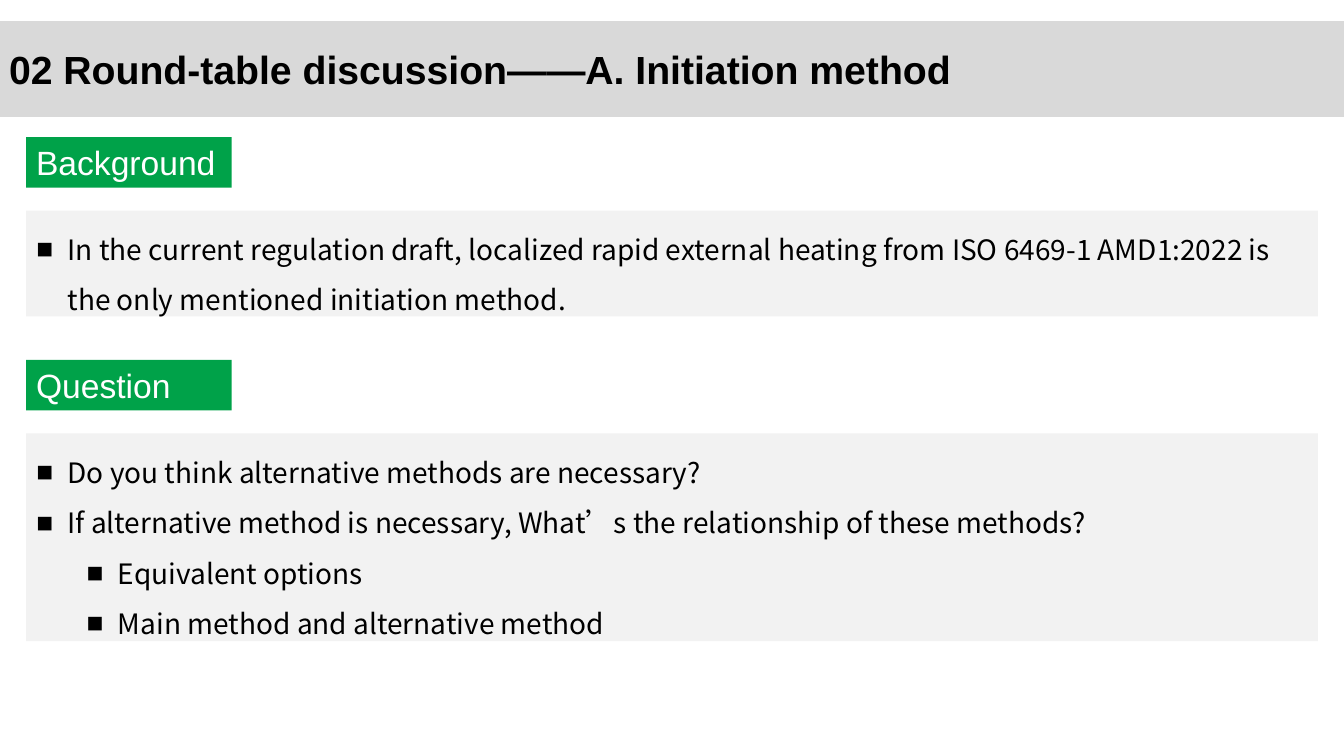
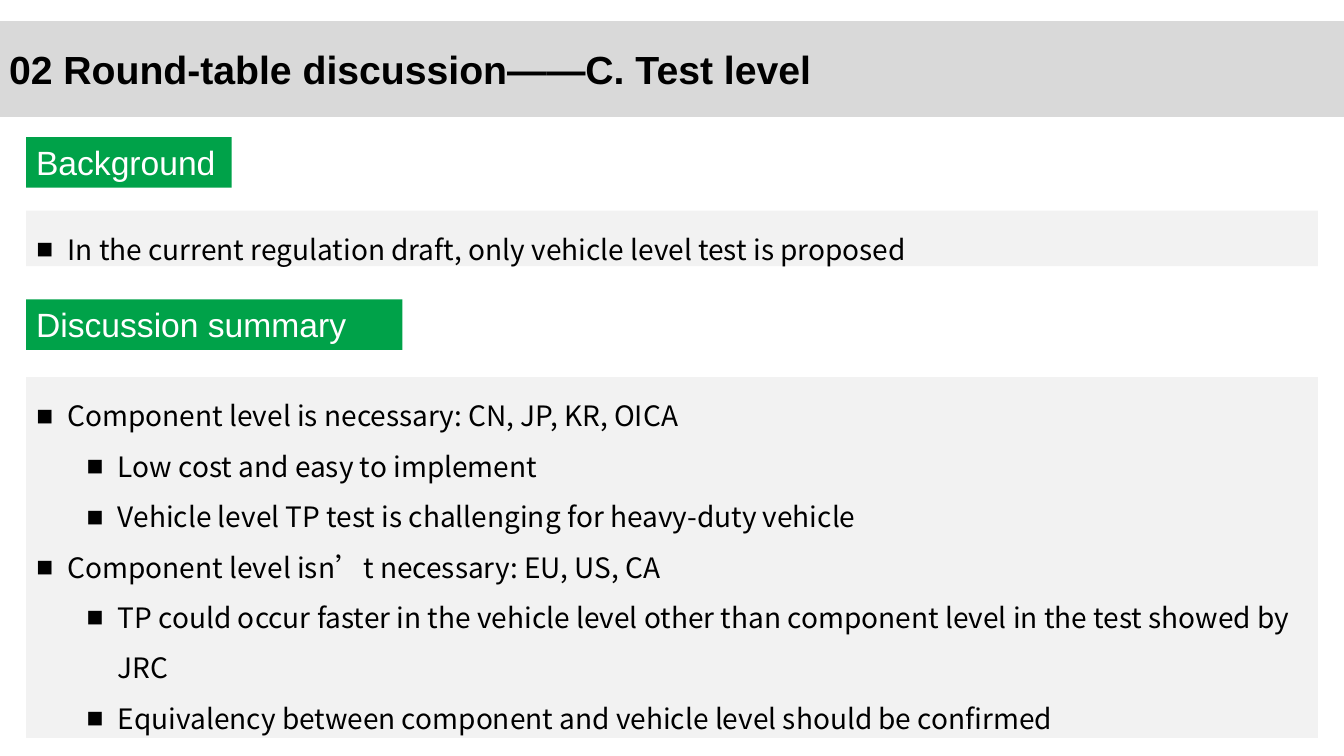
from dataclasses import dataclass

from lxml.etree import SubElement
from pptx import Presentation
from pptx.dml.color import RGBColor
from pptx.enum.shapes import MSO_SHAPE as Preset
from pptx.enum.text import MSO_ANCHOR as Anchor, MSO_AUTO_SIZE as AutoSize, PP_ALIGN as Align
from pptx.oxml.ns import qn
from pptx.util import Inches, Pt

BLACK = RGBColor(0x00, 0x00, 0x00)
WHITE = RGBColor(0xFF, 0xFF, 0xFF)
GREEN = RGBColor(0x00, 0xA2, 0x49)
BAND_GREY = RGBColor(0xD9, 0xD9, 0xD9)
PANEL_GREY = RGBColor(0xF2, 0xF2, 0xF2)

HEADING_FONT = "Arial"
LIST_FONT = "Noto Sans CJK SC"

SLIDE_WIDTH = Inches(13.33)
SLIDE_HEIGHT = Inches(7.5)
COLUMN = SLIDE_WIDTH / 100
ROW = SLIDE_HEIGHT / 100

MARGIN = 1.95
TAG_HEIGHT = 6.7
HANGING = Inches(0.31)
LEVEL_STEP = Inches(0.5)
TWO_CONTENT_LAYOUT = 3


@dataclass(frozen=True)
class Item:
    text: str
    level: int = 0


@dataclass(frozen=True)
class Section:
    heading: str
    tag_row: float
    panel_row: float
    panel_rows: float
    items: tuple[Item, ...]
    tag_columns: float = 15.3


@dataclass(frozen=True)
class Topic:
    title: str
    sections: tuple[Section, ...]


TOPICS = (
    Topic("A. Initiation method", (
        Section("Background", 18.13, 27.87, 14, (
            Item("In the current regulation draft, localized rapid external heating "
                 "from ISO 6469-1 AMD1:2022 is the only mentioned initiation method."),
        )),
        Section("Question", 47.6, 57.33, 27.47, (
            Item("Do you think alternative methods are necessary?"),
            Item("If alternative method is necessary, What’s the relationship of these methods?"),
            Item("Equivalent options", 1),
            Item("Main method and alternative method", 1),
        )),
    )),
    Topic("C. Test level", (
        Section("Background", 18.13, 27.87, 7.33, (
            Item("In the current regulation draft, only vehicle level test is proposed"),
        )),
        Section("Discussion summary", 39.6, 49.87, 47.73, (
            Item("Component level is necessary: CN, JP, KR, OICA"),
            Item("Low cost and easy to implement", 1),
            Item("Vehicle level TP test is challenging for heavy-duty vehicle", 1),
            Item("Component level isn’t necessary: EU, US, CA"),
            Item("TP could occur faster in the vehicle level other than component level "
                 "in the test showed by JRC", 1),
            Item("Equivalency between component and vehicle level should be confirmed", 1),
        ), tag_columns=28),
    )),
)


def place(shape, column: float, row: float, columns: float, rows: float) -> None:
    shape.left, shape.width = round(column * COLUMN), round(columns * COLUMN)
    shape.top, shape.height = round(row * ROW), round(rows * ROW)


def paint(shape, colour: RGBColor) -> None:
    shape.fill.solid()
    shape.fill.fore_color.rgb = colour
    shape.line.fill.background()


def style(paragraph, font_name: str, size: int, colour: RGBColor, bold: bool = False) -> None:
    paragraph.alignment = Align.LEFT
    font = paragraph.font
    font.name, font.size, font.bold = font_name, Pt(size), bold
    font.color.rgb = colour


def add_bullet(paragraph) -> None:
    properties = paragraph._p.get_or_add_pPr()
    properties.set("marL", str(HANGING + paragraph.level * LEVEL_STEP))
    properties.set("indent", str(-HANGING))
    SubElement(properties, qn("a:buFont"), typeface=HEADING_FONT)
    SubElement(properties, qn("a:buChar"), char="■")


def fill_title(band, text: str) -> None:
    place(band, -0.08, 2.8, 100.08, 12.67)
    paint(band, BAND_GREY)
    frame = band.text_frame
    frame.text = f"02 Round-table discussion——{text}"
    frame.vertical_anchor = Anchor.MIDDLE
    frame.auto_size = AutoSize.NONE
    style(frame.paragraphs[0], HEADING_FONT, 28, BLACK, bold=True)


def add_tag(slide, section: Section) -> None:
    tag = slide.shapes.add_shape(Preset.RECTANGLE, 0, 0, 0, 0)
    place(tag, MARGIN, section.tag_row, section.tag_columns, TAG_HEIGHT)
    paint(tag, GREEN)
    tag.shadow.inherit = False
    frame = tag.text_frame
    frame.text = section.heading
    frame.word_wrap = True
    frame.vertical_anchor = Anchor.TOP
    style(frame.paragraphs[0], HEADING_FONT, 24, WHITE)


def fill_panel(panel, section: Section) -> None:
    place(panel, MARGIN, section.panel_row, 100 - 2 * MARGIN, section.panel_rows)
    paint(panel, PANEL_GREY)
    frame = panel.text_frame
    frame.text = "\n".join(item.text for item in section.items)
    frame.vertical_anchor = Anchor.TOP
    frame.auto_size = AutoSize.NONE
    for paragraph, item in zip(frame.paragraphs, section.items):
        paragraph.level = item.level
        paragraph.line_spacing = 1.5
        paragraph.space_before = Pt(0)
        add_bullet(paragraph)
        style(paragraph, LIST_FONT, 20, BLACK)


def add_topic(deck, topic: Topic) -> None:
    slide = deck.slides.add_slide(deck.slide_layouts[TWO_CONTENT_LAYOUT])
    fill_title(slide.shapes.title, topic.title)
    for index, section in enumerate(topic.sections, start=1):
        add_tag(slide, section)
        fill_panel(slide.placeholders[index], section)


def main() -> None:
    deck = Presentation()
    deck.slide_width, deck.slide_height = SLIDE_WIDTH, SLIDE_HEIGHT
    for topic in TOPICS:
        add_topic(deck, topic)
    deck.save("out.pptx")


if __name__ == "__main__":
    main()
